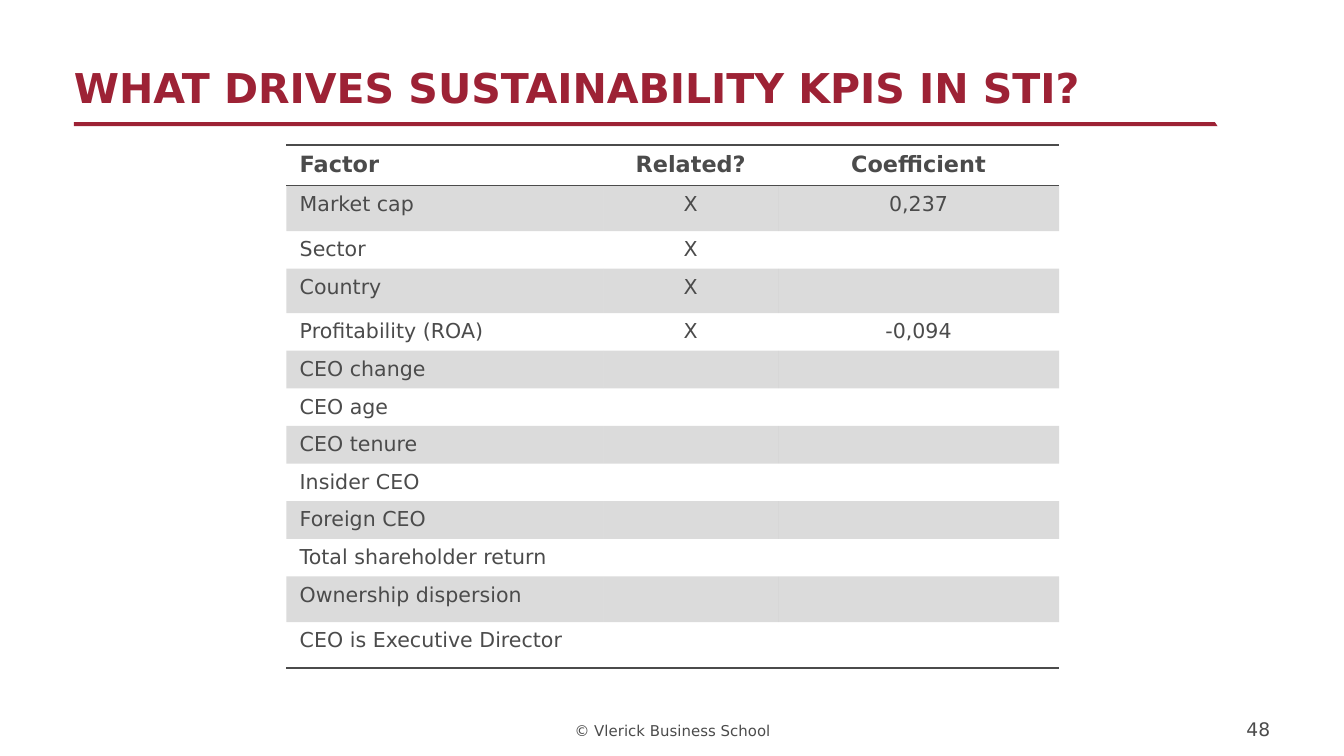
from lxml import etree
from pptx import Presentation
from pptx.dml.color import RGBColor
from pptx.enum.text import MSO_ANCHOR, PP_ALIGN
from pptx.oxml.ns import qn
from pptx.util import Inches, Pt

LEFT, CENTER, RIGHT = PP_ALIGN.LEFT, PP_ALIGN.CENTER, PP_ALIGN.RIGHT
BOTTOM = MSO_ANCHOR.BOTTOM
RED = RGBColor(0x9D, 0x22, 0x35)
GRAY = RGBColor(0x4B, 0x4B, 0x4B)
FONT = "DejaVu Sans"
NO_STYLE = "{2D5ABB26-0587-4C30-8999-92F81FD0307C}"
TITLE_ONLY = 5

# Content
TITLE = "WHAT DRIVES SUSTAINABILITY KPIS IN STI?"
FOOTER = "© Vlerick Business School"
PAGE_NUMBER = "48"
ROWS = [
    ("Factor", "Related?", "Coefficient"),
    ("Market cap", "X", "0,237"),
    ("Sector", "X", ""),
    ("Country", "X", ""),
    ("Profitability (ROA)", "X", "-0,094"),
    ("CEO change", "", ""),
    ("CEO age", "", ""),
    ("CEO tenure", "", ""),
    ("Insider CEO", "", ""),
    ("Foreign CEO", "", ""),
    ("Total shareholder return", "", ""),
    ("Ownership dispersion", "", ""),
    ("CEO is Executive Director", "", ""),
]
COLUMN_WIDTHS = [2.36, 1.3, 2.09]
COLUMN_ALIGNMENTS = [LEFT, CENTER, CENTER]
ROW_HEIGHT = 0.28
SPECIAL_HEIGHTS = {0: 0.3, 1: 0.34, 3: 0.33, 11: 0.34, 12: 0.34}


def write(text_frame, text, alignment, size, color=GRAY, bold=False):
    paragraph = text_frame.paragraphs[0]
    paragraph.alignment = alignment
    if not text:  # keeps an empty cell from growing its row
        end = etree.SubElement(paragraph._p, qn("a:endParaRPr"), sz=str(size * 100))
        etree.SubElement(end, qn("a:latin"), typeface=FONT)
        return
    run = paragraph.add_run()
    run.text = text
    formats = {"name": FONT, "size": Pt(size), "bold": bold}
    for name, value in formats.items():
        setattr(run.font, name, value)
    run.font.color.rgb = color


def place_text(shape, box, text, alignment, size, **font):
    shape.left, shape.top, shape.width, shape.height = map(Inches, box)
    frame = shape.text_frame
    formats = {"word_wrap": True, "vertical_anchor": BOTTOM, "margin_left": 0,
               "margin_top": 0, "margin_right": 0, "margin_bottom": 0}
    for name, value in formats.items():
        setattr(frame, name, value)
    write(frame, text, alignment, size, **font)


def add_border(cell, side):
    line = etree.SubElement(cell._tc.get_or_add_tcPr(), qn("a:" + side), w=str(Pt(1)))
    fill = etree.SubElement(line, qn("a:solidFill"))
    etree.SubElement(fill, qn("a:srgbClr"), val=str(GRAY))


def shade(cell):
    cell.fill.solid()
    cell.fill.fore_color.rgb = GRAY
    color = cell._tc.tcPr.find(qn("a:solidFill")).find(qn("a:srgbClr"))
    etree.SubElement(color, qn("a:alpha"), val="20000")


# Widescreen slide, 16:9
presentation = Presentation()
presentation.slide_width = Inches(10)
presentation.slide_height = Inches(10) * 9 // 16
slide = presentation.slides.add_slide(presentation.slide_layouts[TITLE_ONLY])

# Title and its rule with a slanted end
place_text(slide.shapes.title, (0.55, 0, 8.27, 0.83), TITLE, LEFT, 22,
           color=RED, bold=True)
builder = slide.shapes.build_freeform(Inches(0.55), Inches(0.91))
builder.add_line_segments([(Inches(x), Inches(y)) for x, y in
                           [(9.04, 0.91), (9.06, 0.94), (0.55, 0.94)]])
title_rule = builder.convert_to_shape()
title_rule.shadow.inherit = False
title_rule.fill.solid()
title_rule.fill.fore_color.rgb = RED
title_rule.line.fill.background()

# Factor table
heights = [SPECIAL_HEIGHTS.get(index, ROW_HEIGHT) for index in range(len(ROWS))]
frame = slide.shapes.add_table(
    len(ROWS), len(COLUMN_WIDTHS), Inches(2.13), Inches(1.08),
    Inches(sum(COLUMN_WIDTHS)), Inches(sum(heights)))
table = frame.table
table.first_row = table.horz_banding = False
table._tbl.tblPr.find(qn("a:tableStyleId")).text = NO_STYLE
for column, width in zip(table.columns, COLUMN_WIDTHS):
    column.width = Inches(width)
for row_index, values in enumerate(ROWS):
    table.rows[row_index].height = Inches(heights[row_index])
    header = row_index == 0
    for column_index, value in enumerate(values):
        cell = table.cell(row_index, column_index)
        write(cell.text_frame, value, COLUMN_ALIGNMENTS[column_index],
              12 if header else 11, bold=header)
        if header:
            add_border(cell, "lnT")
        if header or row_index == len(ROWS) - 1:
            add_border(cell, "lnB")
        if row_index % 2:
            shade(cell)
        else:
            cell.fill.background()

# Footer
for box, text, alignment, size in [
    ((3.94, 5.35, 2.13, 0.15), FOOTER, CENTER, 8),
    ((8.9, 5.35, 0.55, 0.16), PAGE_NUMBER, RIGHT, 10),
]:
    place_text(slide.shapes.add_textbox(0, 0, 0, 0), box, text, alignment, size)

presentation.save("out.pptx")
